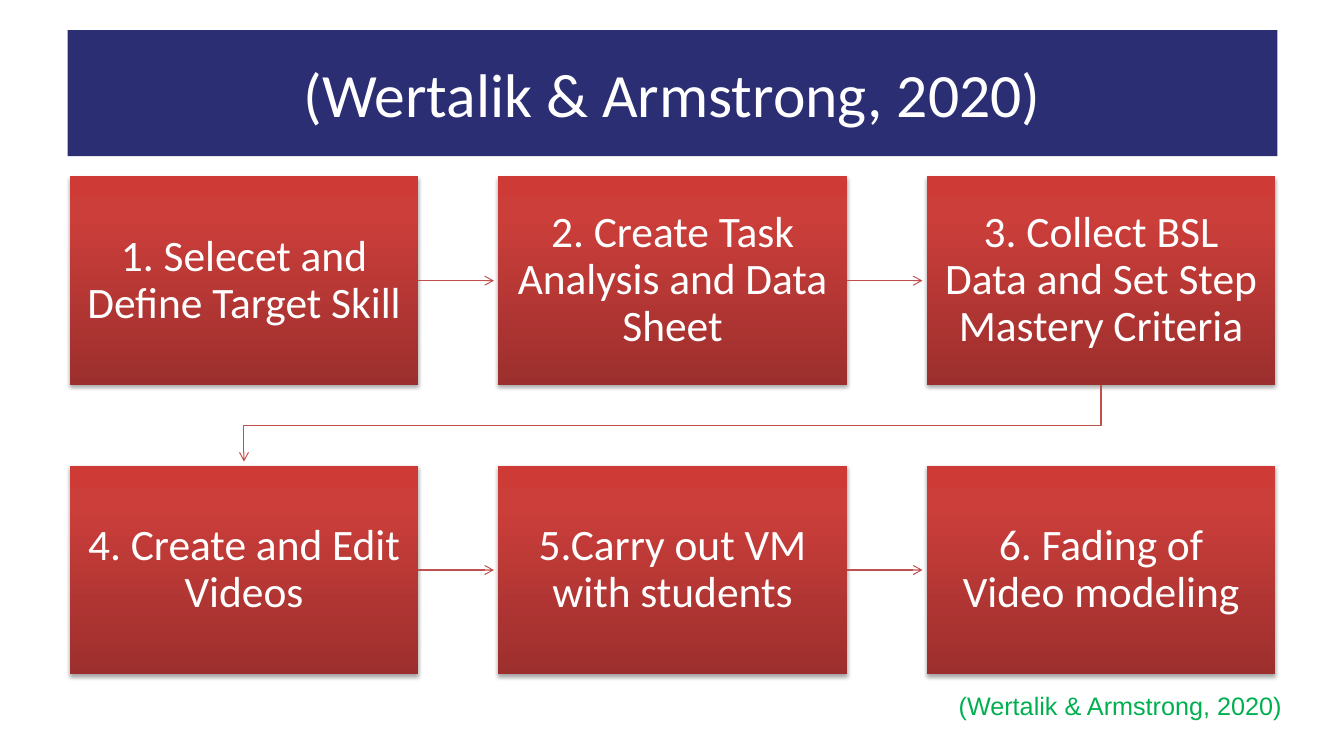
from copy import deepcopy
from dataclasses import dataclass

from lxml.etree import SubElement
from pptx import Presentation
from pptx.dml.color import RGBColor as Color
from pptx.enum.shapes import MSO_CONNECTOR as Connector, MSO_SHAPE as Preset
from pptx.enum.text import MSO_ANCHOR as Anchor, MSO_AUTO_SIZE as AutoSize, PP_ALIGN as Align
from pptx.oxml.ns import qn
from pptx.util import Inches, Pt


@dataclass(frozen=True)
class Theme:
    """Colours, fonts and type sizes of the slide."""
    banner: Color = Color.from_string("2B2E73")
    light: Color = Color.from_string("FFFFFF")
    arrow: Color = Color.from_string("C0504D")
    citation: Color = Color.from_string("00B050")
    card_stops: tuple = ((0, "9C2F2D"), (0.8, "CB3E3A"), (1, "CE3B37"))
    body_font: str = "Calibri"
    citation_font: str = "Arial"
    title_size: int = 44
    card_size: int = 31
    citation_size: int = 18


THEME = Theme()
CITATION = "(Wertalik & Armstrong, 2020)"
STEPS = (
    "1. Selecet and Define Target Skill",
    "2. Create Task Analysis and Data Sheet",
    "3. Collect BSL Data and Set Step Mastery Criteria",
    "4. Create and Edit Videos",
    "5.Carry out VM with students",
    "6. Fading of Video modeling",
)
COLUMNS = 3
CARD_WIDTH, CARD_HEIGHT = 3.46, 2.07
ARROW_GAP = 0.04


def add_text(shape, text, font, size, color, align):
    """Write one run into the first paragraph of a shape."""
    para = shape.text_frame.paragraphs[0]
    para.alignment = align
    span = para.add_run()
    span.text = text
    span.font.name = font
    span.font.size = Pt(size)
    span.font.color.rgb = color
    return para


def add_rectangle(page, left, top, width, height):
    """Add a plain rectangle with wrapped, vertically centred text."""
    box = page.shapes.add_shape(Preset.RECTANGLE, Inches(left), Inches(top),
                                Inches(width), Inches(height))
    box.shadow.inherit = False
    box.line.fill.background()
    box.text_frame.word_wrap = True
    box.text_frame.vertical_anchor = Anchor.MIDDLE
    return box


def add_banner(page, left, top, width, height):
    """Add the title banner."""
    banner = add_rectangle(page, left, top, width, height)
    banner.fill.solid()
    banner.fill.fore_color.rgb = THEME.banner
    para = add_text(banner, CITATION, THEME.body_font, THEME.title_size,
                    THEME.light, Align.CENTER)
    para.space_after = Pt(6)


def shade_card(card):
    """Give a card its vertical gradient and soft shadow."""
    card.fill.gradient()
    card.fill.gradient_angle = 90
    stop_list = card.element.spPr.find(qn("a:gradFill")).find(qn("a:gsLst"))
    stop_list.insert(1, deepcopy(stop_list[0]))
    for stop, (position, color) in zip(card.fill.gradient_stops, THEME.card_stops):
        stop.position = position
        stop.color.rgb = Color.from_string(color)
    effects = card.element.spPr.find(qn("a:effectLst"))
    shadow = SubElement(effects, qn("a:outerShdw"), blurRad=str(Pt(3.1)),
                        dist=str(Pt(1.8)), dir="5400000", rotWithShape="0")
    black = SubElement(shadow, qn("a:srgbClr"), val="000000")
    SubElement(black, qn("a:alpha"), val="35000")


def add_card(page, left, top, text):
    """Add one step of the process."""
    card = add_rectangle(page, left, top, CARD_WIDTH, CARD_HEIGHT)
    shade_card(card)
    frame = card.text_frame
    frame.margin_left = frame.margin_right = Inches(0.17)
    frame.margin_top = frame.margin_bottom = Inches(0.18)
    para = add_text(card, text, THEME.body_font, THEME.card_size,
                    THEME.light, Align.CENTER)
    para.line_spacing = 0.9


def style_arrow(shape):
    """Colour an outline and put an open arrowhead at its end."""
    shape.line.color.rgb = THEME.arrow
    shape.line.width = Pt(0.75)
    SubElement(shape.line._get_or_add_ln(), qn("a:tailEnd"), type="arrow")


def add_straight_arrow(page, start, end, height):
    """Add a level arrow between two neighbouring cards."""
    arrow = page.shapes.add_connector(Connector.STRAIGHT, Inches(start), Inches(height),
                                      Inches(end), Inches(height))
    style_arrow(arrow)
    SubElement(arrow.element.spPr, qn("a:effectLst"))


def add_return_arrow(page, start, end):
    """Add the bent arrow from the end of one row to the start of the next."""
    (start_x, start_y), (end_x, end_y) = start, end
    middle = (start_y + end_y + ARROW_GAP) / 2
    points = ((start_x, middle), (end_x, middle), (end_x, end_y))
    builder = page.shapes.build_freeform(Inches(start_x), Inches(start_y))
    builder.add_line_segments([(Inches(x), Inches(y)) for x, y in points], close=False)
    arrow = builder.convert_to_shape()
    arrow.shadow.inherit = False
    arrow.fill.background()
    style_arrow(arrow)


def add_process(page, left, top, column_step, row_step):
    """Lay out the step cards in rows and join them with arrows."""
    for index, text in enumerate(STEPS):
        row, column = divmod(index, COLUMNS)
        x, y = left + column * column_step, top + row * row_step
        add_card(page, x, y, text)
        if column < COLUMNS - 1:
            add_straight_arrow(page, x + CARD_WIDTH, x + column_step - ARROW_GAP,
                               y + CARD_HEIGHT / 2)
        elif index < len(STEPS) - 1:
            add_return_arrow(page, (x + CARD_WIDTH / 2, y + CARD_HEIGHT),
                             (left + CARD_WIDTH / 2, y + row_step - ARROW_GAP))


def add_citation(page, left, top, width, height):
    """Add the source line under the process."""
    box = page.shapes.add_textbox(Inches(left), Inches(top), Inches(width), Inches(height))
    box.text_frame.word_wrap = False
    box.text_frame.auto_size = AutoSize.SHAPE_TO_FIT_TEXT
    add_text(box, CITATION, THEME.citation_font, THEME.citation_size,
             THEME.citation, Align.LEFT)


def main():
    """Build and save the deck."""
    deck = Presentation()
    deck.slide_width, deck.slide_height = Inches(13.33), Inches(7.5)
    page = deck.slides.add_slide(deck.slide_layouts[6])
    add_banner(page, 0.67, 0.3, 12, 1.25)
    add_process(page, 0.69, 1.75, 4.25, 2.87)
    add_citation(page, 9.41, 6.8, 3.44, 0.4)
    deck.save("out.pptx")


if __name__ == "__main__":
    main()
